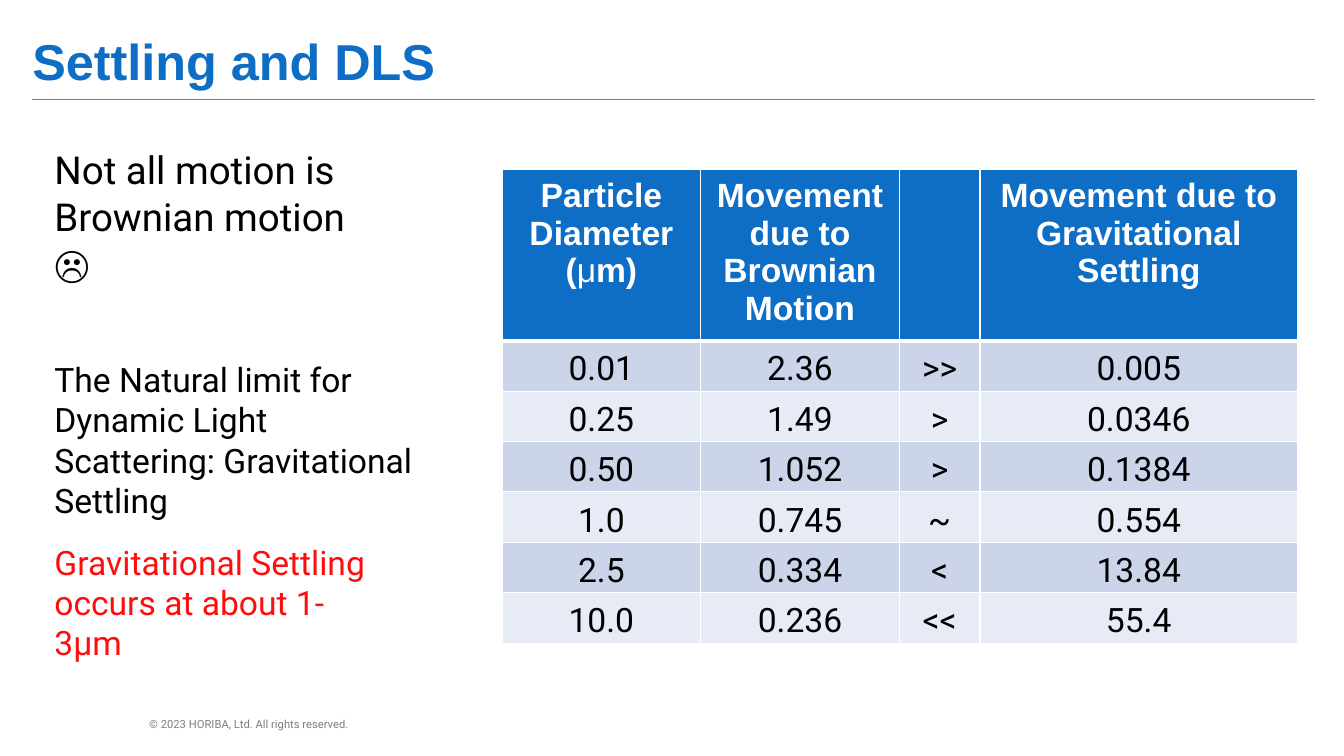
from lxml import etree
from pptx import Presentation
from pptx.dml.color import RGBColor
from pptx.enum.shapes import MSO_CONNECTOR
from pptx.enum.text import MSO_ANCHOR, PP_ALIGN
from pptx.oxml.ns import qn
from pptx.util import Inches, Pt

BLUE = RGBColor(0x0E, 0x6E, 0xC5)
BAND_DARK = RGBColor(0xCC, 0xD4, 0xEA)
BAND_LIGHT = RGBColor(0xE7, 0xEB, 0xF5)
GREY = RGBColor(0x7E, 0x7E, 0x7E)
RED = RGBColor(0xFF, 0x0D, 0x0D)
BLACK = RGBColor(0, 0, 0)
WHITE = RGBColor(0xFF, 0xFF, 0xFF)

HEADINGS = ["Particle Diameter (μm)", "Movement due to Brownian Motion", "",
            "Movement due to Gravitational Settling"]
MOVEMENTS = [
    ["0.01", "2.36", ">>", "0.005"],
    ["0.25", "1.49", ">", "0.0346"],
    ["0.50", "1.052", ">", "0.1384"],
    ["1.0", "0.745", "~", "0.554"],
    ["2.5", "0.334", "<", "13.84"],
    ["10.0", "0.236", "<<", "55.4"],
]


class SettlingSlide:
    heading_font = "Arial"
    body_font = "Roboto"

    def __init__(self, presentation):
        self.slide = presentation.slides.add_slide(presentation.slide_layouts[5])

    def style(self, paragraph, size, color, font=body_font, bold=False,
              align=PP_ALIGN.LEFT):
        paragraph.alignment = align
        paragraph.font.size = Pt(size)
        paragraph.font.name = font
        paragraph.font.bold = bold
        paragraph.font.color.rgb = color

    def prepare(self, frame, top_inset):
        frame.word_wrap = True
        frame.vertical_anchor = MSO_ANCHOR.TOP
        frame.margin_left = frame.margin_right = frame.margin_bottom = 0
        frame.margin_top = Inches(top_inset)

    def title(self, text, left, top, width, height):
        heading = self.slide.shapes.title
        heading.left, heading.top = Inches(left), Inches(top)
        heading.width, heading.height = Inches(width), Inches(height)
        self.prepare(heading.text_frame, 0.02)
        heading.text_frame.text = text
        self.style(heading.text_frame.paragraphs[0], 36, BLUE, self.heading_font, True)

    def rule(self, left, top, width):
        line = self.slide.shapes.add_connector(
            MSO_CONNECTOR.STRAIGHT, Inches(left), Inches(top),
            Inches(left + width), Inches(top))
        line.line.color.rgb = GREY
        line.line.width = Pt(1)
        etree.SubElement(line._element.spPr, qn("a:effectLst"))

    def text(self, left, top, width, height, paragraphs):
        """Add a box of (text, size, color, right indent, line spacing) paragraphs."""
        frame = self.slide.shapes.add_textbox(
            Inches(left), Inches(top), Inches(width), Inches(height)).text_frame
        self.prepare(frame, 0.02)
        for index, (words, size, color, indent, spacing) in enumerate(paragraphs):
            paragraph = frame.add_paragraph() if index else frame.paragraphs[0]
            paragraph.text = words
            paragraph.line_spacing = spacing
            paragraph.space_before = Pt(15.8 if index else 0)
            paragraph._p.get_or_add_pPr().set("marR", str(Inches(indent)))
            self.style(paragraph, size, color)
        return frame

    def borders(self, cell, top, bottom):
        properties = cell._tc.get_or_add_tcPr()
        for side, points in (("L", 1), ("R", 1), ("T", top), ("B", bottom)):
            edge = etree.SubElement(properties, qn(f"a:ln{side}"), w=str(Pt(points)))
            fill = etree.SubElement(edge, qn("a:solidFill"))
            etree.SubElement(fill, qn("a:srgbClr"), val=str(WHITE))

    def cell(self, cell, text, row):
        header = row == 0
        self.borders(cell, 3 if row == 1 else 1, 3 if header else 1)
        cell.fill.solid()
        cell.fill.fore_color.rgb = (
            BLUE if header else BAND_DARK if row % 2 else BAND_LIGHT)
        cell.margin_left = cell.margin_right = cell.margin_bottom = 0
        cell.margin_top = Inches(0.08 if header else 0.09)
        paragraph = cell.text_frame.paragraphs[0]
        before, mu, after = text.partition("μ")
        for part in filter(None, (before, mu, after)):
            run = paragraph.add_run()
            run.text = part
            if part == "μ":
                run.font.bold = False
        self.style(paragraph, 24, WHITE if header else BLACK,
                   self.heading_font if header else self.body_font, header,
                   PP_ALIGN.CENTER)

    def table(self, left, top, widths, heights, rows):
        table = self.slide.shapes.add_table(
            len(rows), len(widths), Inches(left), Inches(top),
            Inches(sum(widths)), Inches(sum(heights))).table
        for column, width in zip(table.columns, widths):
            column.width = Inches(width)
        for index, (height, values) in enumerate(zip(heights, rows)):
            table.rows[index].height = Inches(height)
            for column, value in enumerate(values):
                self.cell(table.cell(index, column), value, index)


def main():
    presentation = Presentation()
    presentation.slide_width, presentation.slide_height = Inches(13.33), Inches(7.5)
    page = SettlingSlide(presentation)
    page.rule(0.32, 0.99, 12.72)
    page.title("Settling and DLS", 0.32, 0.28, 8.7, 0.63)
    page.text(1.48, 7.1, 2.2, 0.16, [
        ("© 2023 HORIBA, Ltd. All rights reserved.", 8, GREY, 0, 1)])
    claim = page.text(0.54, 1.42, 3.37, 0.96, [
        ("Not all motion is Brownian motion ", 27.5, BLACK, 0.2, 1.02)])
    frown = claim.paragraphs[0].add_run()
    frown.text = "☹"
    frown.font.name = page.heading_font
    page.text(0.54, 3.54, 3.6, 2.63, [
        ("The Natural limit for Dynamic Light Scattering: Gravitational Settling",
         24, BLACK, 0, 1),
        ("Gravitational Settling occurs at about 1-3μm", 24, RED, 0.35, Pt(28.6))])
    page.table(4.98, 1.68, [1.97, 1.97, 0.8, 3.15],
               [1.7] + [0.5] * len(MOVEMENTS), [HEADINGS] + MOVEMENTS)
    presentation.save("out.pptx")


if __name__ == "__main__":
    main()
